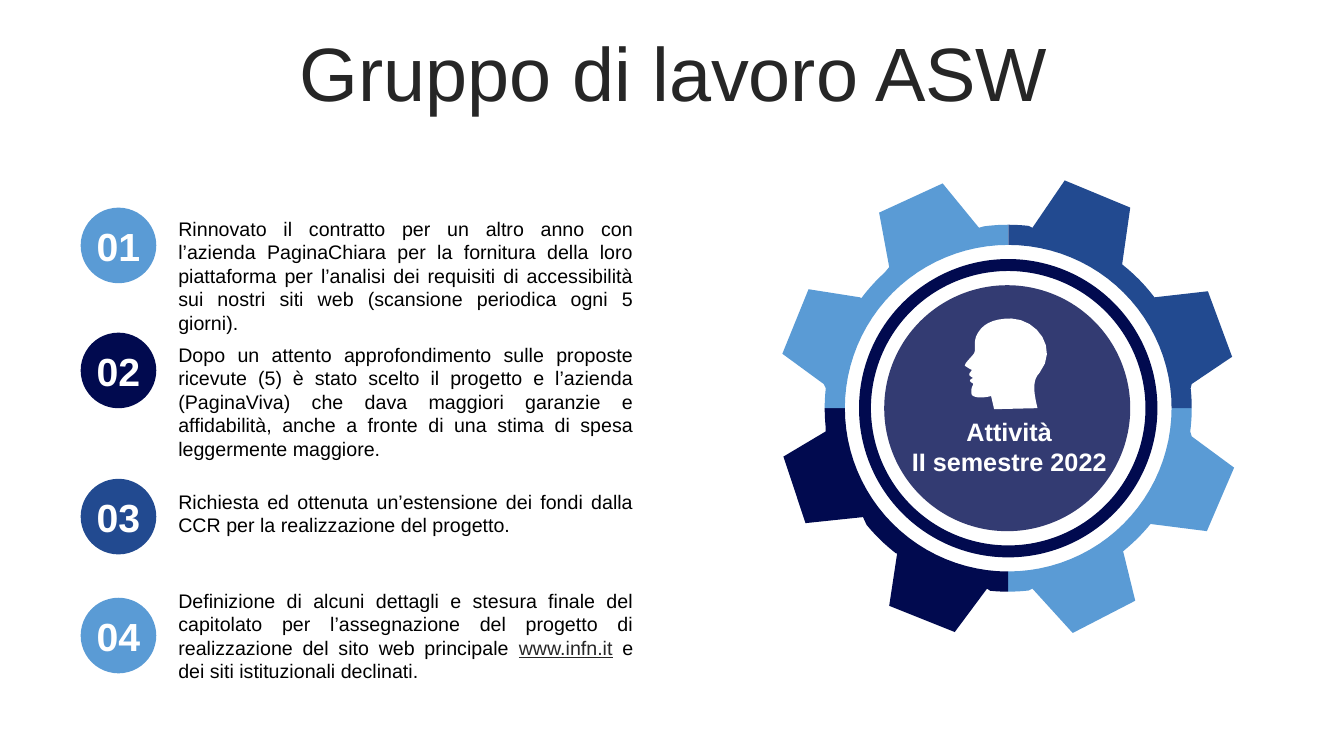
"""Build the ASW working group slide with four numbered points and a gear."""
from dataclasses import dataclass
from math import atan2, cos, pi, sin, tau

from pptx import Presentation
from pptx.dml.color import RGBColor as RGB
from pptx.enum.shapes import MSO_SHAPE as Shape
from pptx.enum.text import MSO_ANCHOR as Anchor, MSO_AUTO_SIZE as Auto, PP_ALIGN as Align
from pptx.oxml.ns import qn
from pptx.util import Inches, Pt
from lxml.etree import SubElement


@dataclass(frozen=True)
class Theme:
    font: str = "Arial"
    sky: str = "5A9BD5"
    navy: str = "010A4F"
    blue: str = "224A90"
    white: str = "FFFFFF"
    black: str = "000000"
    ink: str = "262626"
    title: int = 54
    number: int = 28
    label: int = 18
    body: int = 14


THEME = Theme()

ITEMS = [
    (2.06, 2.1, 1.28, THEME.sky, [
        "Rinnovato il contratto per un altro anno con l’azienda PaginaChiara per la "
        "fornitura della loro piattaforma per l’analisi dei requisiti di accessibilità "
        "sui nostri siti web (scansione periodica ogni 5 giorni)."]),
    (3.3, 3.35, 1.28, THEME.navy, [
        "Dopo un attento approfondimento sulle proposte ricevute (5) è stato scelto il "
        "progetto e l’azienda (PaginaViva) che dava maggiori garanzie e affidabilità, "
        "anche a fronte di una stima di spesa leggermente maggiore."]),
    (4.75, 4.81, 0.57, THEME.blue, [
        "Richiesta ed ottenuta un’estensione dei fondi dalla CCR per la realizzazione "
        "del progetto."]),
    (5.93, 5.79, 1.04, THEME.sky, [
        "Definizione di alcuni dettagli e stesura finale del capitolato per "
        "l’assegnazione del progetto di realizzazione del sito web principale ",
        "www.infn.it", " e dei siti istituzionali declinati."]),
]

CENTER = (10.0, 4.05)
OUTER, INNER = 1.82, 1.62
QUADRANTS = [
    (THEME.sky, [[(11.82, 4.33), (12.24, 4.64), (11.97, 5.27), (11.42, 5.2)],
                 [(11.14, 5.47), (11.26, 5.96), (10.64, 6.28), (10.24, 5.84)]]),
    (THEME.navy, [[(9.79, 5.84), (9.47, 6.27), (8.82, 6.01), (8.9, 5.48)],
                  [(8.56, 5.13), (7.99, 5.19), (7.77, 4.53), (8.19, 4.28)]]),
    (THEME.sky, [[(8.17, 3.81), (7.76, 3.51), (8.02, 2.87), (8.53, 2.95)],
                 [(8.82, 2.65), (8.72, 2.11), (9.35, 1.82), (9.71, 2.26)]]),
    (THEME.blue, [[(10.24, 2.26), (10.56, 1.79), (11.21, 2.06), (11.13, 2.62)],
                  [(11.45, 2.95), (11.98, 2.89), (12.22, 3.54), (11.82, 3.81)]]),
]

HEAD_START = (10.03, 3.16)
HEAD_CURVES = [
    [(9.84, 3.16), (9.73, 3.22), (9.68, 3.34)],
    [(9.65, 3.44), (9.69, 3.48), (9.65, 3.52)],
    [(9.61, 3.57), (9.57, 3.6), (9.57, 3.63)],
    [(9.59, 3.64), (9.61, 3.66), (9.64, 3.67)],
    [(9.63, 3.69), (9.6, 3.71), (9.62, 3.73)],
    [(9.65, 3.75)],
    [(9.64, 3.76), (9.62, 3.76), (9.62, 3.78)],
    [(9.63, 3.8), (9.66, 3.8), (9.65, 3.82)],
    [(9.63, 3.85), (9.63, 3.9), (9.64, 3.92)],
    [(9.67, 3.95), (9.75, 3.95), (9.83, 3.93)],
    [(9.86, 4.06)],
    [(10.29, 4.05)],
    [(10.24, 3.85), (10.25, 3.76), (10.31, 3.7)],
    [(10.5, 3.46), (10.29, 3.17), (10.03, 3.16)],
]


def arc(radius, start, end, steps=24):
    """Return points on a circle about the gear center."""
    angles = [start + (end - start) * i / steps for i in range(steps + 1)]
    return [(CENTER[0] + radius * cos(a), CENTER[1] + radius * sin(a)) for a in angles]


def angle(point):
    """Return the angle of a point seen from the gear center."""
    return atan2(point[1] - CENTER[1], point[0] - CENTER[0]) % tau


def quadrant(start, teeth):
    """Return the outline of a quarter of the gear."""
    points, a = [], start
    for tooth in teeth:
        points += arc(OUTER, a, angle(tooth[0]), 6)[:-1] + tooth
        a = angle(tooth[-1])
    end = start + pi / 2
    return points + arc(OUTER, a, end, 6)[1:] + arc(INNER, end, start)


def flatten(start, curves, steps=8):
    """Return points along a chain of lines and cubic curves."""
    points = [start]
    for curve in curves:
        if len(curve) == 1:
            points += curve
            continue
        corners = [points[-1]] + curve
        for i in range(1, steps + 1):
            t = i / steps
            weights = ((1 - t) ** 3, 3 * t * (1 - t) ** 2, 3 * t * t * (1 - t), t ** 3)
            points.append(tuple(sum(w * c[k] for w, c in zip(weights, corners))
                                for k in (0, 1)))
    return points


class Deck:
    """Hold the theme and the current slide."""

    def __init__(self, theme):
        self.theme = theme
        self.prs = Presentation()
        self.prs.slide_width, self.prs.slide_height = Inches(13.33), Inches(7.5)
        self.slide = self.prs.slides.add_slide(self.prs.slide_layouts[5])

    def style(self, p, size, color, align, bold=False):
        p.alignment = align
        p.font.name, p.font.size, p.font.bold = self.theme.font, Pt(size), bold
        p.font.color.rgb = RGB.from_string(color)

    def paint(self, sp, color, alpha=None):
        sp.shadow.inherit = False
        sp.fill.solid()
        sp.fill.fore_color.rgb = RGB.from_string(color)
        sp.line.fill.background()
        if alpha:
            clr = sp.element.spPr.find(".//" + qn("a:srgbClr"))
            SubElement(clr, qn("a:alpha")).set("val", str(alpha * 1000))
        return sp

    def title(self, text, *box):
        sp = self.slide.shapes.title
        sp.left, sp.top, sp.width, sp.height = map(Inches, box)
        tf = sp.text_frame
        tf.text = text
        tf.auto_size, tf.vertical_anchor = Auto.NONE, Anchor.MIDDLE
        p = tf.paragraphs[0]
        p.line_spacing = 0.9
        self.style(p, self.theme.title, self.theme.ink, Align.CENTER)

    def shape(self, kind, color, *box, alpha=None):
        sp = self.slide.shapes.add_shape(kind, *map(Inches, box))
        return self.paint(sp, color, alpha)

    def badge(self, text, color, *box):
        tf = self.shape(Shape.OVAL, color, *box).text_frame
        tf.margin_left = tf.margin_right = tf.margin_top = tf.margin_bottom = 0
        tf.word_wrap, tf.vertical_anchor = False, Anchor.MIDDLE
        tf.text = text
        self.style(tf.paragraphs[0], self.theme.number, self.theme.white, Align.CENTER, True)

    def text(self, lines, size, color, align, *box, bold=False):
        tf = self.slide.shapes.add_textbox(*map(Inches, box)).text_frame
        tf.word_wrap = True
        for i, runs in enumerate(lines):
            p = tf.add_paragraph() if i else tf.paragraphs[0]
            self.style(p, size, color, align, bold)
            for text in runs:
                r = p.add_run()
                r.text = text
                if text.startswith("www."):
                    r.font.underline = True
                    r.font.color.rgb = RGB.from_string(self.theme.ink)

    def outline(self, points, color):
        start, *rest = [(Inches(x), Inches(y)) for x, y in points]
        fb = self.slide.shapes.build_freeform(*start)
        fb.add_line_segments(rest)
        self.paint(fb.convert_to_shape(), color)


def main():
    deck = Deck(THEME)
    deck.title("Gruppo di lavoro ASW", 0.35, 0.37, 12.66, 0.79)
    for n, (badge_top, text_top, height, color, runs) in enumerate(ITEMS, 1):
        deck.text([runs], THEME.body, THEME.black, Align.JUSTIFY, 1.67, text_top, 4.71, height)
        deck.badge(f"{n:02}", color, 0.8, badge_top, 0.75, 0.75)
    for i, (color, teeth) in enumerate(QUADRANTS):
        deck.outline(quadrant(i * pi / 2, teeth), color)
    deck.shape(Shape.OVAL, THEME.navy, 8.77, 2.83, 2.44, 2.44, alpha=80)
    ring = deck.shape(Shape.DONUT, THEME.navy, 8.52, 2.57, 2.96, 2.96)
    ring.adjustments[0] = 0.04
    deck.outline(flatten(HEAD_START, HEAD_CURVES), THEME.white)
    deck.text([["Attività"], ["II semestre 2022"]], THEME.label, THEME.white, Align.CENTER,
              8.73, 4.08, 2.56, 0.71, bold=True)
    deck.prs.save("out.pptx")


if __name__ == "__main__":
    main()
